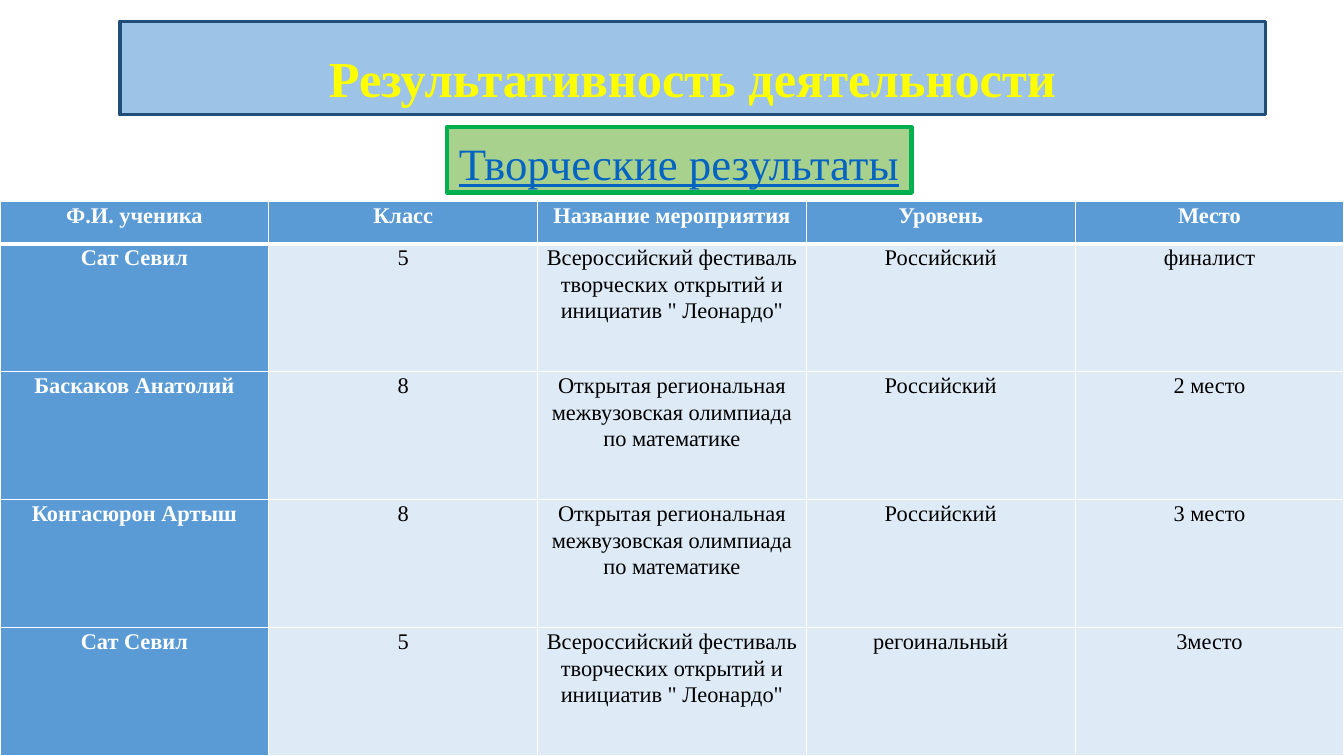
from lxml import etree
from pptx import Presentation
from pptx import util as u
from pptx.dml.color import RGBColor
from pptx.enum import shapes, text
from pptx.oxml import ns

WHITE = RGBColor(0xFF, 0xFF, 0xFF)
BLACK = RGBColor(0x00, 0x00, 0x00)
YELLOW = RGBColor(0xFF, 0xFF, 0x00)
SKY = RGBColor(0x9D, 0xC3, 0xE6)
NAVY = RGBColor(0x1F, 0x4E, 0x79)
LIGHT_GREEN = RGBColor(0xA9, 0xD1, 0x8E)
GREEN = RGBColor(0x00, 0xB0, 0x50)
LINK_BLUE = RGBColor(0x05, 0x63, 0xC1)
BLUE = RGBColor(0x5B, 0x9B, 0xD5)
PALE_BLUE = RGBColor(0xDE, 0xEB, 0xF7)

FONT = "Times New Roman"
SLIDE_WIDTH = 13.33
HEADER_HEIGHT = 0.42
ROW_HEIGHT = 1.27
FESTIVAL = 'Всероссийский фестиваль творческих открытий и инициатив " Леонардо"'
OLYMPIAD = "Открытая региональная межвузовская олимпиада по математике"
RESULTS = [
    ["Ф.И. ученика", "Класс", "Название мероприятия", "Уровень", "Место"],
    ["Сат Севил", "5", FESTIVAL, "Российский", "финалист"],
    ["Баскаков Анатолий", "8", OLYMPIAD, "Российский", "2 место"],
    ["Конгасюрон Артыш", "8", OLYMPIAD, "Российский", "3 место"],
    ["Сат Севил", "5", FESTIVAL, "регоинальный", "3место"],
]


def write(frame, words, size, color, bold=False, underline=False):
    para = frame.paragraphs[0]
    para.alignment = text.PP_ALIGN.CENTER
    para.line_spacing = 1.07
    para.space_before = u.Pt(0)
    span = para.add_run()
    span.text = words
    span.font.name = FONT
    span.font.size = u.Pt(size)
    span.font.color.rgb = color
    span.font.bold = bold
    span.font.underline = underline


def paint(box, fill, line, width):
    box.fill.solid()
    box.fill.fore_color.rgb = fill
    box.line.color.rgb = line
    box.line.width = u.Pt(width)


def add_title(page):
    title = page.shapes.title
    title.left, title.top = u.Inches(1.19), u.Inches(0.21)
    title.width, title.height = u.Inches(11.36), u.Inches(0.93)
    paint(title, SKY, NAVY, 2.25)
    frame = title.text_frame
    frame.auto_size = text.MSO_AUTO_SIZE.NONE
    frame.vertical_anchor = text.MSO_ANCHOR.MIDDLE
    frame.margin_top = u.Inches(0.19)
    write(frame, "Результативность деятельности", 36, YELLOW, bold=True)


def add_subtitle(page):
    box = page.shapes.add_shape(
        shapes.MSO_SHAPE.RECTANGLE,
        u.Inches(4.43), u.Inches(1.26), u.Inches(4.61), u.Inches(0.65),
    )
    box.shadow.inherit = False
    paint(box, LIGHT_GREEN, GREEN, 3)
    frame = box.text_frame
    frame.word_wrap = False
    frame.vertical_anchor = text.MSO_ANCHOR.TOP
    write(frame, "Творческие результаты", 32, LINK_BLUE, underline=True)


def add_borders(cell, top, bottom):
    properties = cell._tc.get_or_add_tcPr()
    for side, width in (("L", 1), ("R", 1), ("T", top), ("B", bottom)):
        line = etree.SubElement(properties, ns.qn(f"a:ln{side}"), w=str(u.Pt(width)))
        fill = etree.SubElement(line, ns.qn("a:solidFill"))
        etree.SubElement(fill, ns.qn("a:srgbClr"), val=str(WHITE))


def format_cell(cell, words, row, column):
    heading = row == 0 or column == 0
    cell.margin_left = cell.margin_right = u.Inches(0.05)
    cell.margin_top = cell.margin_bottom = u.Inches(0)
    add_borders(cell, 3 if row == 1 else 1, 3 if row == 0 else 1)
    cell.fill.solid()
    cell.fill.fore_color.rgb = BLUE if heading else PALE_BLUE
    write(cell.text_frame, words, 16, WHITE if heading else BLACK, bold=heading)


def add_results(page):
    rows, columns = len(RESULTS), len(RESULTS[0])
    height = HEADER_HEIGHT + ROW_HEIGHT * (rows - 1)
    table = page.shapes.add_table(
        rows, columns, u.Inches(0), u.Inches(2), u.Inches(SLIDE_WIDTH), u.Inches(height)
    ).table
    for column in table.columns:
        column.width = u.Inches(SLIDE_WIDTH / columns)
    for row, values in enumerate(RESULTS):
        table.rows[row].height = u.Inches(ROW_HEIGHT if row else HEADER_HEIGHT)
        for column, words in enumerate(values):
            format_cell(table.cell(row, column), words, row, column)


def main():
    deck = Presentation()
    deck.slide_width = u.Inches(SLIDE_WIDTH)
    deck.slide_height = u.Inches(7.5)
    page = deck.slides.add_slide(deck.slide_layouts[5])
    add_title(page)
    add_subtitle(page)
    add_results(page)
    deck.save("out.pptx")


if __name__ == "__main__":
    main()
